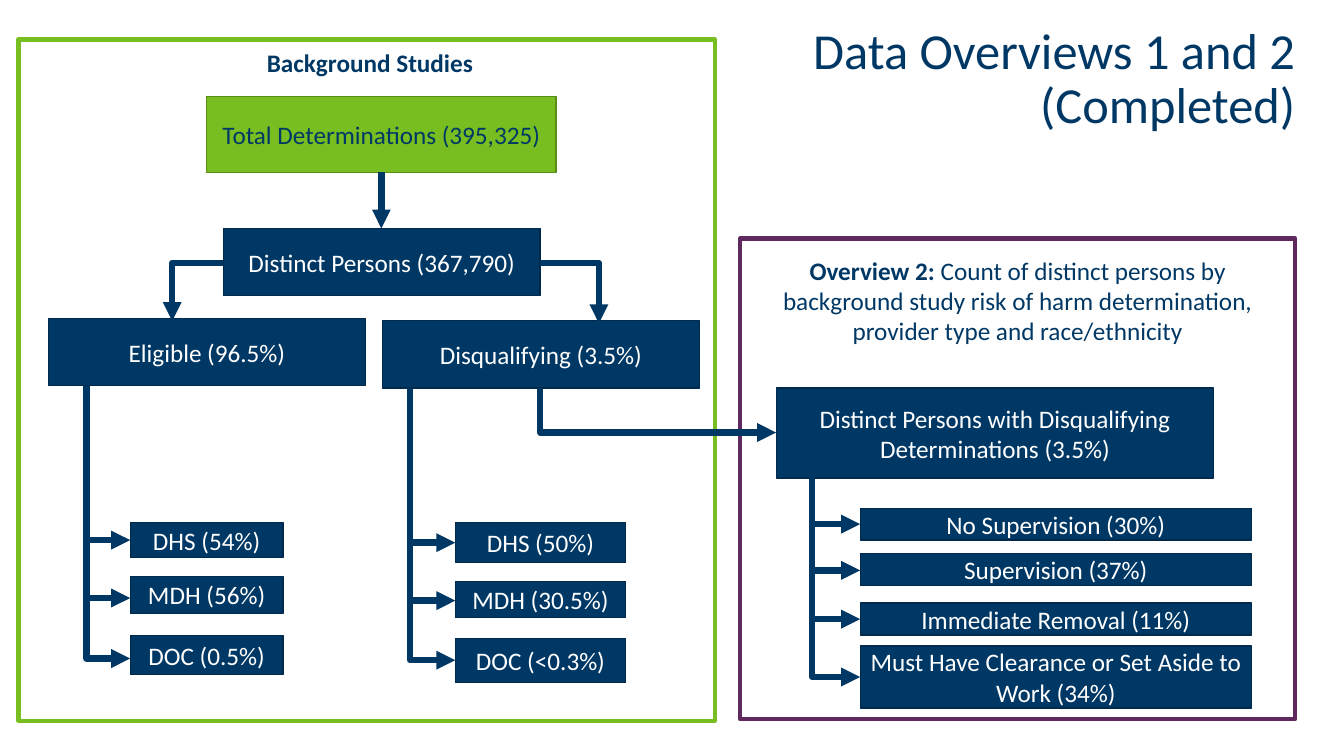
from lxml.etree import SubElement
from pptx import Presentation
from pptx.dml.color import RGBColor
from pptx.enum.shapes import MSO_CONNECTOR, MSO_SHAPE
from pptx.enum.text import MSO_ANCHOR, MSO_AUTO_SIZE, PP_ALIGN
from pptx.oxml.ns import qn
from pptx.util import Inches, Pt

NAVY = RGBColor(0x00, 0x38, 0x65)
NAVY_EDGE = RGBColor(0x00, 0x29, 0x4B)
GREEN = RGBColor(0x78, 0xBE, 0x21)
GREEN_EDGE = RGBColor(0x59, 0x8D, 0x18)
PURPLE = RGBColor(0x5D, 0x29, 0x5F)
WHITE = RGBColor(0xFF, 0xFF, 0xFF)

presentation = Presentation()
presentation.slide_width = Inches(13.33)
presentation.slide_height = Inches(7.5)
slide = presentation.slides.add_slide(presentation.slide_layouts[5])

# Every position is a (column, row) on an 80 by 45 grid
COLUMN = presentation.slide_width / 80
ROW = presentation.slide_height / 45


def add_text(area, text, shape=None, fill=None, edge=None, edge_width=0.85, size=18,
             color=WHITE, lead="", bold=False, align=PP_ALIGN.CENTER):
    """Put text in a box, a bare text box or a given placeholder."""
    left, top, width, height = area
    place = [int(left * COLUMN), int(top * ROW), int(width * COLUMN), int(height * ROW)]
    if shape is not None:
        shape.left, shape.top, shape.width, shape.height = place
    elif fill is None:
        shape = slide.shapes.add_textbox(*place)
        shape.text_frame.auto_size = MSO_AUTO_SIZE.SHAPE_TO_FIT_TEXT
    else:
        shape = slide.shapes.add_shape(MSO_SHAPE.RECTANGLE, *place)
        shape.shadow.inherit = False
        shape.fill.solid()
        shape.fill.fore_color.rgb = fill
        shape.line.color.rgb = edge
        shape.line.width = Pt(edge_width)
        shape.text_frame.vertical_anchor = MSO_ANCHOR.MIDDLE
    shape.text_frame.word_wrap = True
    paragraph = shape.text_frame.paragraphs[0]
    paragraph.alignment = align
    paragraph.font.size = Pt(size)
    for words, weight in ((lead, True), (text, bold)):
        for number, line in enumerate(words.splitlines()):
            if number:
                paragraph.add_line_break()
            run = paragraph.add_run()
            run.text = line
            run.font.name = "Calibri"
            run.font.size = Pt(size)
            run.font.bold = weight
            run.font.color.rgb = color
    return shape


def add_arrow(start, end, first=None):
    """Draw a straight arrow, or one that turns once after going across or down."""
    x1, y1, x2, y2 = start[0] * COLUMN, start[1] * ROW, end[0] * COLUMN, end[1] * ROW
    turn = {}
    if first == "down":
        # The stored frame lies on its side around the same centre
        middle_x, middle_y = (x1 + x2) / 2, (y1 + y2) / 2
        half_width, half_height = (y2 - y1) / 2, (x2 - x1) / 2
        x1, x2 = middle_x - half_width, middle_x + half_width
        y1, y2 = middle_y - half_height, middle_y + half_height
        turn = {"rot": "16200000", "flipH": "1"}
    elif first == "across" and x2 < x1:
        x1, x2 = x2, x1
        turn = {"rot": "10800000", "flipV": "1"}
    kind = MSO_CONNECTOR.ELBOW if first else MSO_CONNECTOR.STRAIGHT
    connector = slide.shapes.add_connector(kind, int(x1), int(y1), int(x2), int(y2))
    connector.line.color.rgb = NAVY
    connector.line.width = Pt(4.5)
    properties = connector._element.spPr
    if first:
        properties.find(qn("a:prstGeom")).set("prst", "bentConnector2")
    for name, value in turn.items():
        properties.find(qn("a:xfrm")).set(name, value)
    SubElement(properties.find(qn("a:ln")), qn("a:tailEnd"), type="triangle")
    SubElement(properties, qn("a:effectLst"))


# Frames of the two overviews
add_text((44.05, 14.2, 33.05, 28.6), "", fill=WHITE, edge=PURPLE, edge_width=3)
add_text((1.1, 2.35, 41.45, 40.55), "", fill=WHITE, edge=GREEN, edge_width=3)

# Title
title = add_text((44.05, 0, 33.05, 9.55), """Data Overviews 1 and 2
(Completed)""", shape=slide.shapes.title, size=36, color=NAVY, align=PP_ALIGN.RIGHT)
title.text_frame.auto_size = MSO_AUTO_SIZE.NONE
title.text_frame.vertical_anchor = MSO_ANCHOR.MIDDLE
title.text_frame.margin_left = title.text_frame.margin_right = 0
title.text_frame.paragraphs[0].line_spacing = 0.9

# Headings inside the frames
add_text((1.3, 2.5, 41.45, 2.4), "Background Studies", color=NAVY, bold=True)
add_text((44.05, 14.9, 33.05, 6.05),
         "Count of distinct persons by background study risk of harm determination, "
         "provider type and race/ethnicity", lead="Overview 2: ", color=NAVY)

# Main boxes
add_text((12.3, 5.75, 20.8, 4.5), "Total Determinations (395,325)",
         fill=GREEN, edge=GREEN_EDGE, color=NAVY)
main_boxes = [
    ((13.3, 13.6, 18.85, 4), "Distinct Persons (367,790)"),
    ((2.9, 18.95, 18.85, 4), "Eligible (96.5%)"),
    ((22.75, 19.1, 18.9, 4), "Disqualifying (3.5%)"),
    ((46.2, 23.1, 26.05, 5.35), "Distinct Persons with Disqualifying Determinations (3.5%)"),
]
for area, label in main_boxes:
    add_text(area, label, fill=NAVY, edge=NAVY_EDGE)

# Arrows between the main boxes
add_arrow((22.7, 10.25), (22.7, 13.6))
add_arrow((13.3, 15.65), (10.25, 19.1), first="across")
add_arrow((32.15, 15.65), (35.65, 19.25), first="across")
add_arrow((32.15, 23.1), (46.2, 25.75), first="down")

# Branches: trunk start, box left and width, then (top, height, arrow row, label)
branches = [
    ((5.15, 23), 7.75, 9.1, [
        (31.1, 2.1, 32.15, "DHS (54%)"),
        (34.3, 2.2, 35.6, "MDH (56%)"),
        (37.85, 2.3, 39.2, "DOC (0.5%)")]),
    ((24.4, 23.1), 27.1, 10.15, [
        (31.1, 2.4, 32.3, "DHS (50%)"),
        (34.6, 2.15, 35.75, "MDH (30.5%)"),
        (38, 2.65, 39.3, "DOC (<0.3%)")]),
    ((48.35, 27.8), 51.2, 23.3, [
        (30.25, 1.9, 31.2, "No Supervision (30%)"),
        (32.95, 1.9, 33.95, "Supervision (37%)"),
        (35.9, 1.9, 36.85, "Immediate Removal (11%)"),
        (38.45, 3.7, 40.3, "Must Have Clearance or Set Aside to Work (34%)")]),
]
for trunk, left, width, leaves in branches:
    for top, height, arrow_row, label in leaves:
        add_text((left, top, width, height), label, fill=NAVY, edge=NAVY_EDGE)
        add_arrow(trunk, (left, arrow_row), first="down")

presentation.save("out.pptx")
